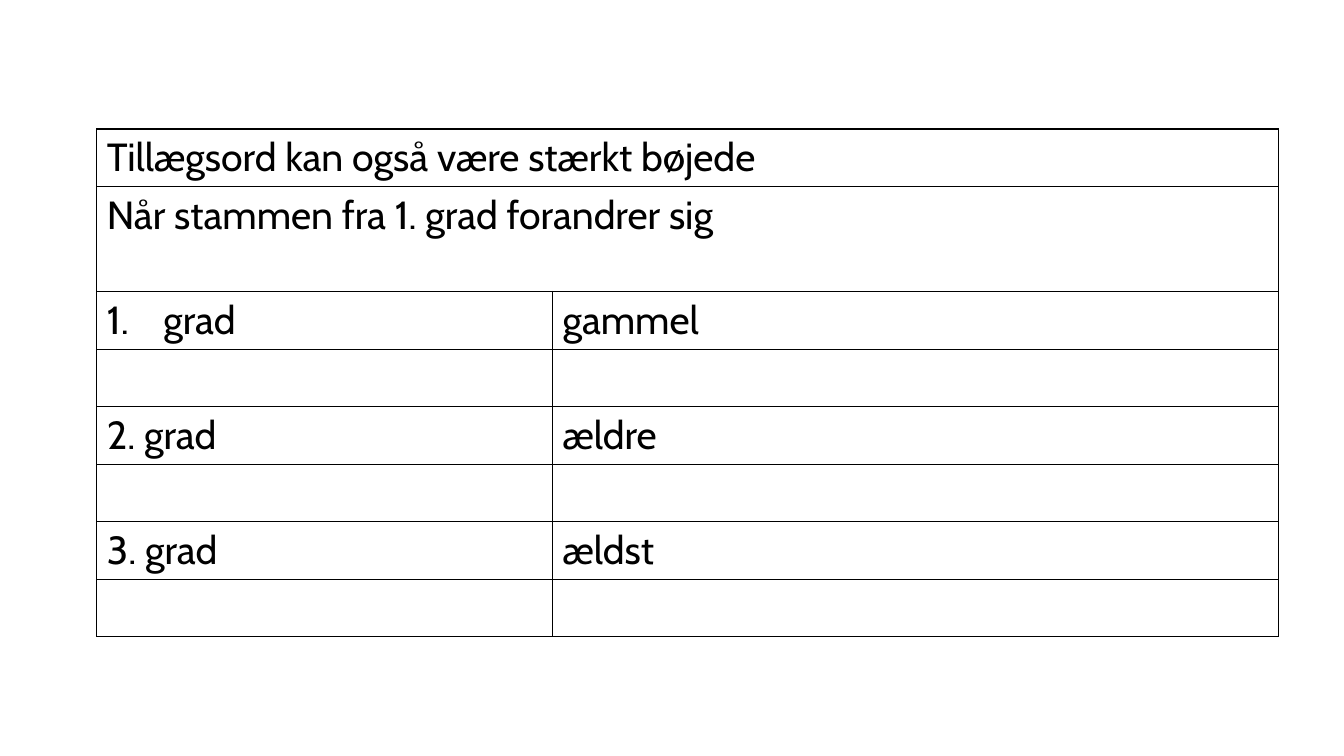
from lxml.etree import SubElement
from pptx import Presentation
from pptx.dml.color import RGBColor
from pptx.oxml import parse_xml
from pptx.oxml.ns import nsdecls, qn
from pptx.util import Inches, Pt

BLACK = RGBColor(0x00, 0x00, 0x00)
FONT = "Cabin"
ROWS = [
    ("Tillægsord kan også være stærkt bøjede",),
    ("Når stammen fra 1. grad forandrer sig",),
    ("grad", "gammel"),
    ("", ""),
    ("2. grad", "ældre"),
    ("", ""),
    ("3. grad", "ældst"),
    ("", ""),
]
WIDTHS = [4.52, 7.2]
LOW, TALL = 0.57, 1.04
HEIGHTS = [LOW, TALL] + [LOW] * 6


def frame(cell):
    """Give the cell a thin black line on all four sides."""
    props = cell._tc.get_or_add_tcPr()
    for spot, side in enumerate(("lnL", "lnR", "lnT", "lnB")):
        line = parse_xml(
            f'<a:{side} {nsdecls("a")} w="{Pt(1)}"><a:solidFill>'
            f'<a:srgbClr val="{BLACK}"/></a:solidFill></a:{side}>'
        )
        props.insert(spot, line)


prs = Presentation()
prs.slide_width = Inches(13.33)
prs.slide_height = Inches(7.5)
slide = prs.slides.add_slide(prs.slide_layouts[6])

table = slide.shapes.add_table(
    len(ROWS), len(WIDTHS), Inches(0.96), Inches(1.28),
    Inches(sum(WIDTHS)), Inches(sum(HEIGHTS)),
).table
table.first_row = False
table.horz_banding = False
for col, width in zip(table.columns, WIDTHS):
    col.width = Inches(width)
for row, height in zip(table.rows, HEIGHTS):
    row.height = Inches(height)

for cell in table.iter_cells():
    cell.fill.background()
    frame(cell)

for r, texts in enumerate(ROWS):
    if len(texts) == 1:
        table.cell(r, 0).merge(table.cell(r, 1))
    for c, text in enumerate(texts):
        if not text:
            continue
        para = table.cell(r, c).text_frame.paragraphs[0]
        run = para.add_run()
        run.text = text
        run.font.name = FONT
        run.font.size = Pt(28)
        run.font.color.rgb = BLACK

# The first degree is an automatically numbered item
item = table.cell(2, 0).text_frame.paragraphs[0]._p.get_or_add_pPr()
item.set("marL", str(Inches(0.56)))
item.set("indent", str(-Inches(0.56)))
SubElement(item, qn("a:buFont"), typeface=FONT)
SubElement(item, qn("a:buAutoNum"), type="arabicPeriod")

prs.save("out.pptx")
